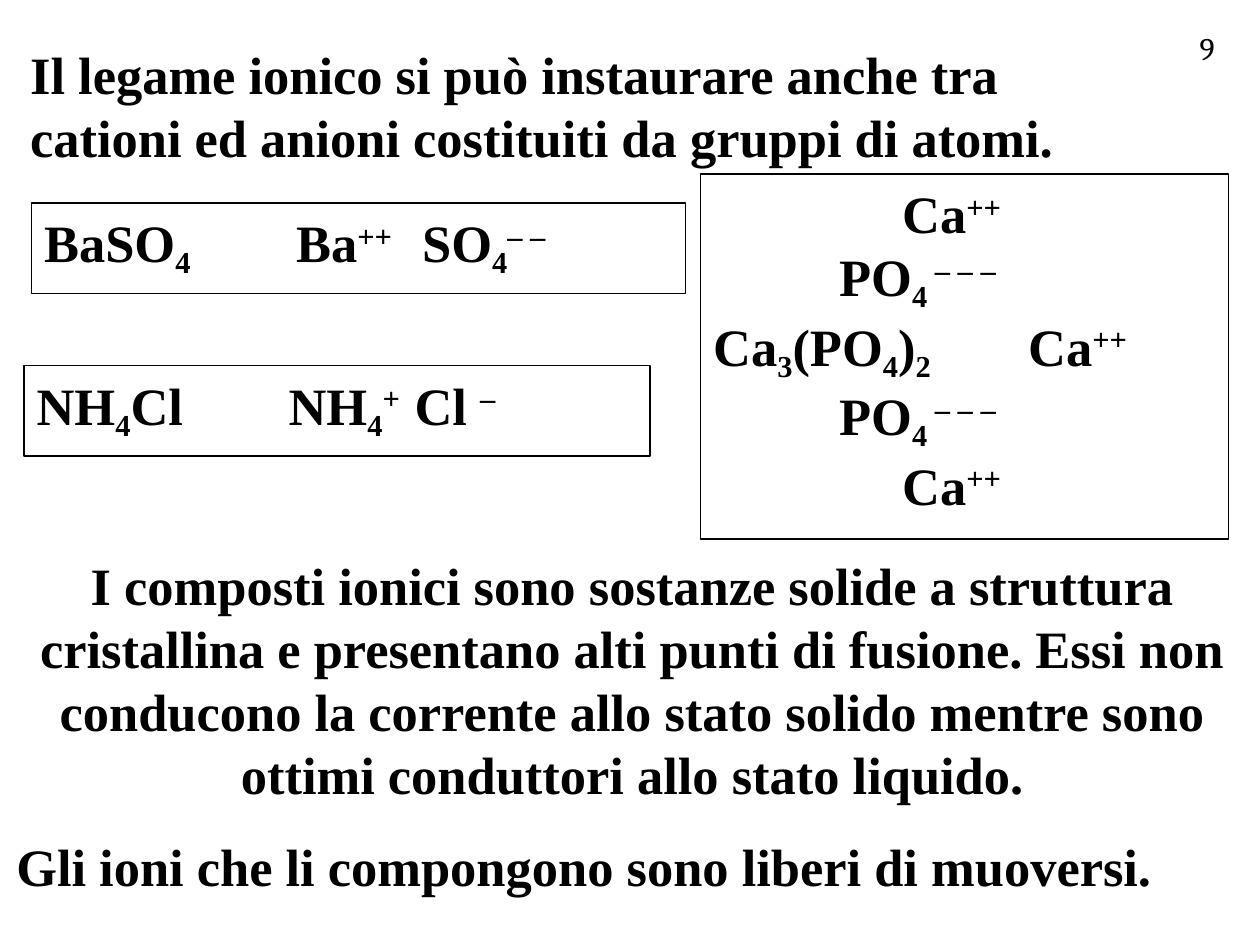
from pptx import Presentation
from pptx.dml.color import RGBColor
from pptx.enum.shapes import MSO_SHAPE as Shape
from pptx.enum.text import MSO_ANCHOR as Anchor, MSO_AUTO_SIZE as AutoSize, PP_ALIGN as Align
from pptx.util import Inches, Pt

COLORS = {"ink": "000000"}
BODY = {"name": "Times New Roman", "size": Pt(30), "bold": True}
NUMBER = {"name": "Cambria", "size": Pt(18), "bold": False}
BASELINES = {"_": "-21000", "^": "30000"}
INSET = Inches(0.06)
MARGIN = Inches(0.04)

INTRO = "Il legame ionico si può instaurare anche tra cationi ed anioni costituiti da gruppi di atomi."
PROPERTIES = (
    "I composti ionici sono sostanze solide a struttura cristallina e presentano alti punti di fusione. "
    "Essi non conducono la corrente allo stato solido mentre sono ottimi conduttori allo stato liquido."
)
MOBILITY = "Gli ioni che li compongono sono liberi di muoversi."

CALCIUM = "\t\t\tCa|^++"
PHOSPHATE = "\t\tPO|_4 |^– – –"
BARIUM_SULFATE = ["BaSO|_4|\t\tBa|^++|\tSO|_4|^– –"]
AMMONIUM_CHLORIDE = ["NH|_4|Cl\t\tNH|_4|^+|\tCl |^–"]
CALCIUM_PHOSPHATE = [CALCIUM, PHOSPHATE, "Ca|_3|(PO|_4|)|_2|\t\tCa|^++", PHOSPHATE, CALCIUM]


def set_format(target, values):
    for name, value in values.items():
        setattr(target, name, value)


def add_run(paragraph, piece, font):
    run = paragraph.add_run()
    run.text = piece.lstrip("_^")
    set_format(run.font, font)
    run.font.color.rgb = RGBColor.from_string(COLORS["ink"])
    if piece[0] in BASELINES:
        run.font._element.set("baseline", BASELINES[piece[0]])


def fill_text(shape, lines, font=BODY, align=Align.LEFT, wrap=True, margin=MARGIN):
    frame = shape.text_frame
    set_format(frame, {
        "margin_left": INSET, "margin_right": INSET, "margin_top": INSET, "margin_bottom": INSET,
        "word_wrap": wrap, "auto_size": AutoSize.SHAPE_TO_FIT_TEXT, "vertical_anchor": Anchor.TOP,
    })
    for index, line in enumerate(lines):
        paragraph = frame.add_paragraph() if index else frame.paragraphs[0]
        paragraph.alignment = align
        properties = paragraph._p.get_or_add_pPr()
        properties.set("marL", str(margin))
        properties.set("indent", "0")
        for piece in line.split("|"):
            add_run(paragraph, piece, font)


def add_statement(slide, box, text, **options):
    fill_text(slide.shapes.add_textbox(*map(Inches, box)), [text], **options)


def add_formula_box(slide, box, lines, **options):
    shape = slide.shapes.add_shape(Shape.RECTANGLE, *map(Inches, box))
    shape.shadow.inherit = False
    shape.fill.background()
    shape.line.color.rgb = RGBColor.from_string(COLORS["ink"])
    shape.line.width = Pt(1)
    fill_text(shape, lines, **options)


def main():
    presentation = Presentation()
    set_format(presentation, {"slide_width": Inches(10), "slide_height": Inches(7.5)})
    slide = presentation.slides.add_slide(presentation.slide_layouts[6])
    add_statement(slide, (9.42, 0.17, 0.32, 0.39), "9",
                  font=NUMBER, align=Align.CENTER, wrap=False, margin=0)
    add_statement(slide, (0.14, 0.27, 9.03, 1.15), INTRO)
    add_formula_box(slide, (0.19, 2.9, 4.97, 0.72), AMMONIUM_CHLORIDE)
    add_formula_box(slide, (5.56, 1.38, 4.19, 2.9), CALCIUM_PHOSPHATE)
    add_statement(slide, (0, 4.33, 10, 2.18), PROPERTIES, align=Align.CENTER)
    add_statement(slide, (0.03, 6.56, 9.94, 0.64), MOBILITY)
    add_formula_box(slide, (0.25, 1.61, 5.19, 0.72), BARIUM_SULFATE, wrap=False)
    presentation.save("out.pptx")


if __name__ == "__main__":
    main()
